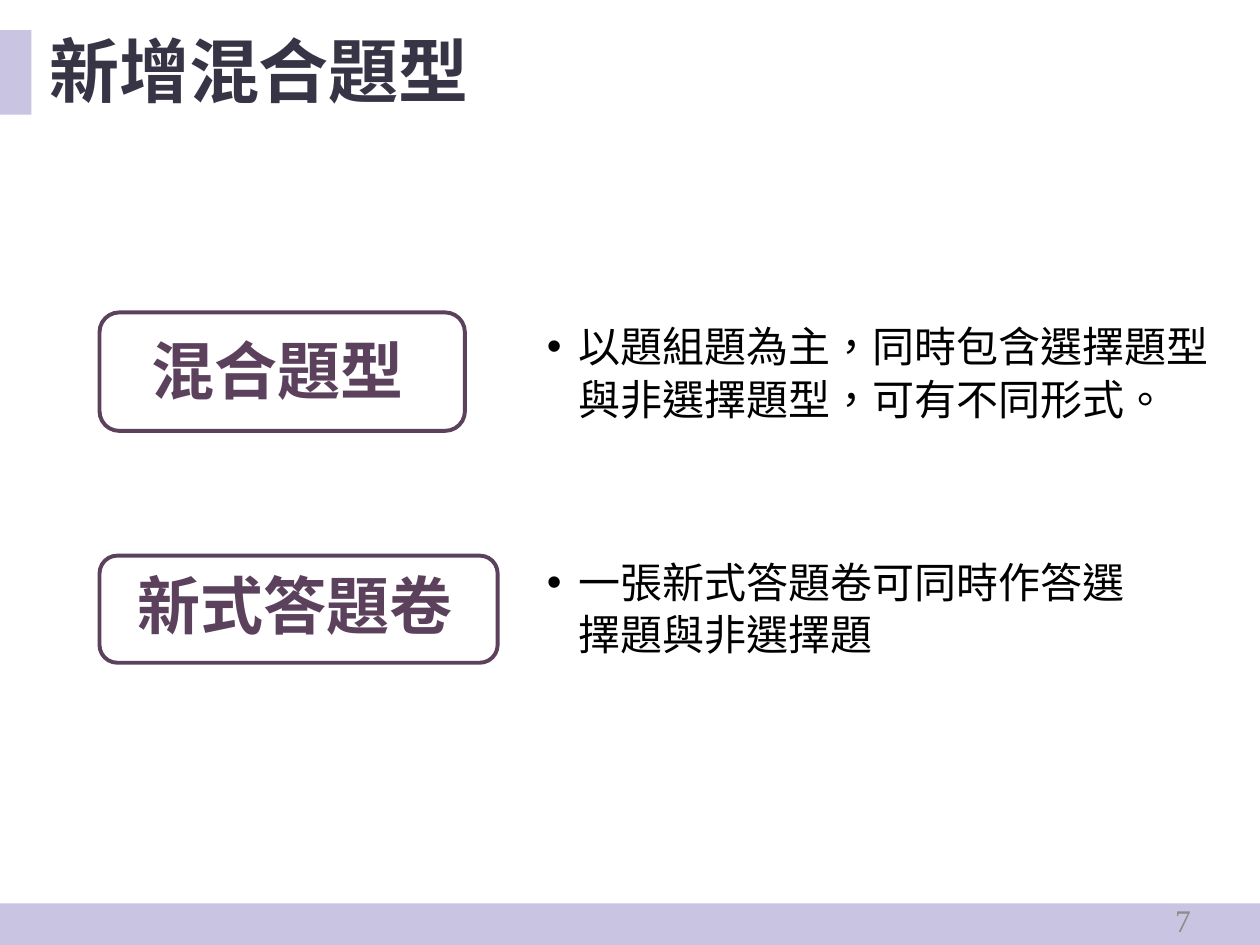
"""Build the slide on the new mixed question type."""
from dataclasses import dataclass

from lxml.etree import SubElement
from pptx import Presentation
from pptx.dml.color import RGBColor as Rgb
from pptx.enum.shapes import MSO_SHAPE as Kind
from pptx.enum.text import MSO_ANCHOR as Anchor, MSO_AUTO_SIZE as Fit, PP_ALIGN as Align
from pptx.oxml.ns import qn
from pptx.util import Inches, Pt


@dataclass(frozen=True)
class Theme:
    band: str = "C8C4E2"
    dark: str = "373545"
    plum: str = "5C415D"
    black: str = "000000"
    gray: str = "8C8C8C"
    serif: str = "Times New Roman"
    sans: str = "Noto Sans CJK SC"
    head: int = 40
    label: int = 36
    body: int = 24
    small: int = 18


THEME = Theme()
WIDE, HIGH = 10, 7.5
LEFT, RIGHT = 0.79, 4.24
TITLE = "新增混合題型"
PAGE = "7"
BANDS = [(0, 7.17, WIDE, 0.34), (0, 0.24, 0.25, 0.67)]
ROWS = [
    dict(label="混合題型", frame=(LEFT, 2.48, 2.9, 0.94), inner=(1.07, 2.57, 2.32, 0.72),
         note="以題組題為主，同時包含選擇題型與非選擇題型，可有不同形式。",
         area=(RIGHT, 2.48, 5.7, 0.99)),
    dict(label="新式答題卷", frame=(LEFT, 4.41, 3.16, 0.85), inner=(0.96, 4.45, 2.98, 0.69),
         note="一張新式答題卷可同時作答選擇題與非選擇題",
         area=(RIGHT, 4.35, 5.02, 0.98)),
]


def place(shape, box):
    shape.left, shape.top, shape.width, shape.height = map(Inches, box)


def write(shape, text, *, size, color, face=THEME.serif, bold=False, align=Align.LEFT,
          anchor=Anchor.MIDDLE, lead=None, indent=0, bullet=None, wrap=True):
    frame = shape.text_frame
    frame.auto_size, frame.word_wrap = Fit.NONE, wrap
    frame.vertical_anchor = anchor
    frame.margin_left = frame.margin_right = Inches(0.1)
    frame.margin_top = frame.margin_bottom = Inches(0.05)
    para = frame.paragraphs[0]
    para.alignment, para.space_before = align, Pt(0)
    if lead:
        para.line_spacing = lead
    props = para._p.get_or_add_pPr()
    props.set("marL", str(Inches(indent)))
    props.set("indent", str(-Inches(indent) if bullet else 0))
    if bullet:
        SubElement(props, qn("a:buFont"), typeface="Arial")
        SubElement(props, qn("a:buChar"), char=bullet)
    run = para.add_run()
    run.text = text
    font = run.font
    font.size, font.bold, font.name = Pt(size), bold, face
    font.color.rgb = Rgb.from_string(color)
    style = run._r.get_or_add_rPr()
    style.set("lang", "zh-TW")
    SubElement(style, qn("a:ea"), typeface=THEME.sans)


def draw(shapes, kind, box, fill=None, line=None):
    shape = shapes.add_shape(kind, *map(Inches, box))
    shape.shadow.inherit = False
    if fill:
        shape.fill.solid()
        shape.fill.fore_color.rgb = Rgb.from_string(fill)
    else:
        shape.fill.background()
    if line:
        shape.line.color.rgb = Rgb.from_string(line)
        shape.line.width = Pt(2.25)
    else:
        shape.line.fill.background()
    return shape


def main():
    deck = Presentation()
    deck.slide_width, deck.slide_height = Inches(WIDE), Inches(HIGH)
    slide = deck.slides.add_slide(deck.slide_layouts.get_by_name("Two Content"))
    shapes = slide.shapes
    title, *notes = slide.placeholders

    for box in BANDS:
        draw(shapes, Kind.RECTANGLE, box, fill=THEME.band)
    place(title, (0, 0.14, WIDE, 0.91))
    write(title, TITLE, size=THEME.head, color=THEME.dark, bold=True, lead=0.9, indent=0.29)

    for row, note in zip(ROWS, notes):
        group = shapes.add_group_shape().shapes
        draw(group, Kind.ROUNDED_RECTANGLE, row["frame"], line=THEME.plum)
        label = draw(group, Kind.ROUNDED_RECTANGLE, row["inner"])
        write(label, row["label"], size=THEME.label, color=THEME.plum, bold=True, wrap=False)
        place(note, row["area"])
        write(note, row["note"], size=THEME.body, color=THEME.black, face=THEME.sans,
              anchor=Anchor.TOP, lead=Pt(30), indent=0.25, bullet="•")

    page = shapes.add_textbox(*map(Inches, (7.3, 7.1, 2.25, 0.4)))
    write(page, PAGE, size=THEME.small, color=THEME.gray, align=Align.RIGHT)
    deck.save("out.pptx")


if __name__ == "__main__":
    main()
